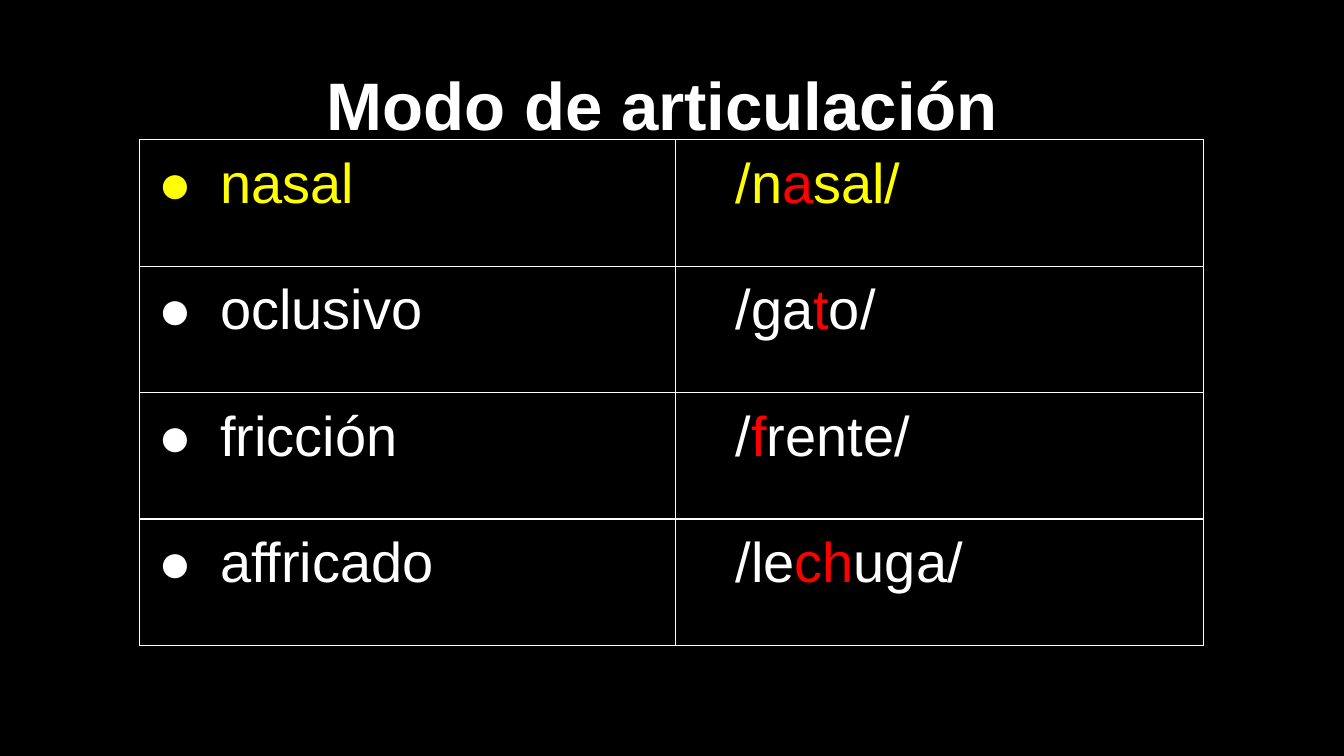
"""Build a slide with a table of manners of articulation in Spanish."""
from lxml.etree import SubElement as Sub
from pptx import Presentation
from pptx.dml.color import RGBColor as Rgb
from pptx.enum.text import MSO_ANCHOR as Anchor, MSO_AUTO_SIZE as Auto, PP_ALIGN as Align
from pptx.oxml.ns import qn
from pptx.util import Cm, Pt

HUES = {"back": "000000", "text": "FFFFFF", "lead": "FFFF00", "mark": "FF0000"}
FONT = "Arial"
TITLE = "Modo de articulación "
ROWS = [
    ("nasal", ("/n", "a", "sal/"), "lead"),
    ("oclusivo", ("/ga", "t", "o/"), "text"),
    ("fricción", ("/", "f", "rente/"), "text"),
    ("affricado", ("/le", "ch", "uga/"), "text"),
]
COLS = (10.13, 9.98)
TALL = 2.39
LEFT = TOP = 2.64
PAD = 0.25


def write(para, text, size=30, hue="text", bold=False):
    run = para.add_run()
    run.text = text
    font = run.font
    font.name, font.size, font.bold = FONT, Pt(size), bold
    font.color.rgb = Rgb.from_string(HUES[hue])


def indent(para, left, first=0):
    props = para._p.get_or_add_pPr()
    props.set("marL", str(Cm(left)))
    props.set("indent", str(Cm(first)))
    return props


def bullet(para, hue):
    props = indent(para, 1.27, -1.17)
    Sub(Sub(props, qn("a:buClr")), qn("a:srgbClr"), val=HUES[hue])
    Sub(props, qn("a:buFont"), typeface=FONT)
    Sub(props, qn("a:buChar"), char="●")


def pad(box):
    box.margin_left = box.margin_right = Cm(PAD)
    box.margin_top = box.margin_bottom = Cm(PAD)


def style(cell):
    pad(cell)
    props = cell._tc.get_or_add_tcPr()
    for side in "LRTB":
        line = Sub(props, qn(f"a:ln{side}"), w=str(Pt(0.75)))
        Sub(Sub(line, qn("a:solidFill")), qn("a:srgbClr"), val=HUES["text"])
    cell.fill.solid()
    cell.fill.fore_color.rgb = Rgb.from_string(HUES["back"])


def head(slide):
    title = slide.shapes.title
    title.left, title.top = Cm(1.27), Cm(0.58)
    title.width, title.height = Cm(22.86), Cm(TALL)
    frame = title.text_frame
    pad(frame)
    frame.word_wrap, frame.auto_size = True, Auto.NONE
    frame.vertical_anchor = Anchor.BOTTOM
    para = frame.paragraphs[0]
    para.alignment = Align.CENTER
    write(para, TITLE, size=36, bold=True)


def grid(slide):
    table = slide.shapes.add_table(
        len(ROWS), len(COLS), Cm(LEFT), Cm(TOP), Cm(sum(COLS)), Cm(TALL * len(ROWS))
    ).table
    table.first_row = table.horz_banding = False
    for col, wide in zip(table.columns, COLS):
        col.width = Cm(wide)
    for row, (name, parts, hue) in zip(table.rows, ROWS):
        row.height = Cm(TALL)
        for cell in row.cells:
            style(cell)
        term, word = (cell.text_frame.paragraphs[0] for cell in row.cells)
        bullet(term, hue)
        write(term, name, hue=hue)
        indent(word, 0.88)
        for part, tone in zip(parts, (hue, "mark", hue)):
            write(word, part, hue=tone)


def main():
    deck = Presentation()
    deck.slide_width, deck.slide_height = Cm(25.4), Cm(14.29)
    slide = deck.slides.add_slide(deck.slide_layouts[5])
    fill = slide.background.fill
    fill.solid()
    fill.fore_color.rgb = Rgb.from_string(HUES["back"])
    head(slide)
    grid(slide)
    deck.save("out.pptx")


if __name__ == "__main__":
    main()
